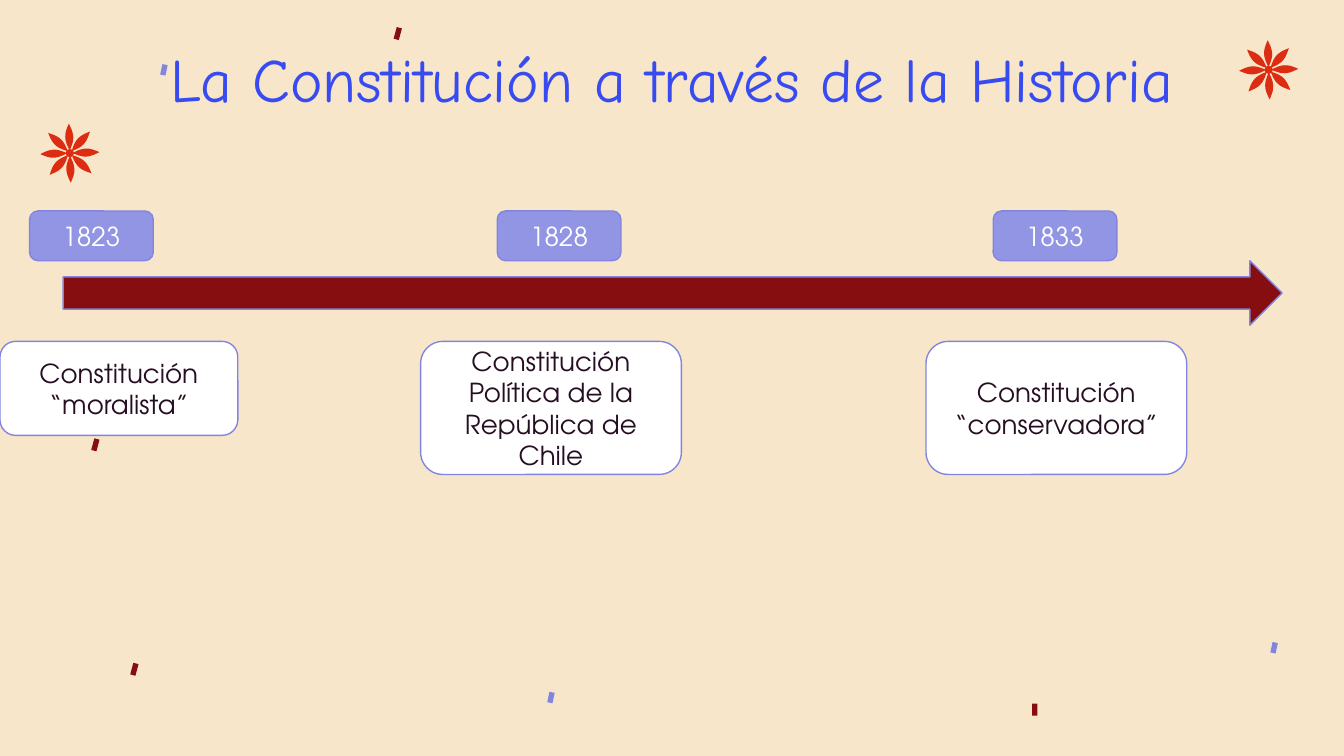
"""Build a timeline slide of the Chilean constitutions of 1823, 1828 and 1833."""
import math

import pptx
import pptx.dml.color
import pptx.enum.shapes
import pptx.enum.text
import pptx.util

Inches = pptx.util.Inches
Pt = pptx.util.Pt
RGBColor = pptx.dml.color.RGBColor
MSO_SHAPE = pptx.enum.shapes.MSO_SHAPE

CREAM = RGBColor(0xF8, 0xE6, 0xCA)
RED = RGBColor(0xDC, 0x2D, 0x12)
MAROON = RGBColor(0x86, 0x0D, 0x10)
LILAC = RGBColor(0x82, 0x85, 0xE0)
LIGHT_LILAC = RGBColor(0x92, 0x94, 0xE4)
BLUE = RGBColor(0x38, 0x4B, 0xF1)
PLUM = RGBColor(0x25, 0x0E, 0x22)
WHITE = RGBColor(0xFF, 0xFF, 0xFF)


def style_shape(sp, fill, line=None):
    sp.shadow.inherit = False
    sp.fill.solid()
    sp.fill.fore_color.rgb = fill
    if line is None:
        sp.line.fill.background()
    else:
        sp.line.color.rgb = line
        sp.line.width = Pt(0.75)


def write_text(sp, text, font, size, color):
    tf = sp.text_frame
    frame_format = {
        "word_wrap": True,
        "auto_size": pptx.enum.text.MSO_AUTO_SIZE.NONE,
        "vertical_anchor": pptx.enum.text.MSO_ANCHOR.MIDDLE,
        "margin_left": Inches(0.1),
        "margin_top": Inches(0.1),
        "margin_right": Inches(0.1),
        "margin_bottom": Inches(0.1),
    }
    for name, value in frame_format.items():
        setattr(tf, name, value)
    p = tf.paragraphs[0]
    p.alignment = pptx.enum.text.PP_ALIGN.CENTER
    r = p.add_run()
    r.text = text
    for name, value in {"name": font, "size": Pt(size), "bold": False}.items():
        setattr(r.font, name, value)
    r.font.color.rgb = color


prs = pptx.Presentation()
prs.slide_width = Inches(10)
prs.slide_height = prs.slide_width * 9 // 16
s = prs.slides.add_slide(prs.slide_layouts[5])
s.background.fill.solid()
s.background.fill.fore_color.rgb = CREAM

title = s.shapes.title
title_box = {"left": 1.03, "top": 0.21, "width": 7.94, "height": 0.77}
for name, value in title_box.items():
    setattr(title, name, Inches(value))
write_text(title, "La Constitución a través de la Historia", "Comic Neue", 33, BLUE)
title.text_frame.margin_bottom = Inches(0.13)

steps = 10
for cx, cy in [(0.52, 1.14), (9.44, 0.52)]:
    for petal in range(8):
        angle = math.radians(45 * petal - 2)
        points = []
        for i in range(2 * steps):
            along = 0.02 + 0.2 * (1 - abs(1 - i / steps))
            across = 0.03 * math.sin(math.pi * i / steps)
            x = cx + along * math.cos(angle) - across * math.sin(angle)
            y = cy + along * math.sin(angle) + across * math.cos(angle)
            points.append((Inches(x), Inches(y)))
        builder = s.shapes.build_freeform(*points[0])
        builder.add_line_segments(points[1:], close=True)
        style_shape(builder.convert_to_shape(), RED)
    sp = s.shapes.add_shape(
        MSO_SHAPE.OVAL, Inches(cx - 0.03), Inches(cy - 0.03), Inches(0.06), Inches(0.06)
    )
    style_shape(sp, RED)

confetti = [
    (7.7, 5.28, 0, MAROON),
    (1.0, 4.98, 15, MAROON),
    (0.71, 3.31, 15, MAROON),
    (2.96, 0.25, 15, MAROON),
    (1.22, 0.52, 12, LILAC),
    (4.1, 5.19, 12, LILAC),
    (9.48, 4.82, 12, LILAC),
]
for cx, cy, tilt, color in confetti:
    w, h = (0.04, 0.09) if color == MAROON else (0.04, 0.08)
    sp = s.shapes.add_shape(
        MSO_SHAPE.RECTANGLE, Inches(cx - w / 2), Inches(cy - h / 2), Inches(w), Inches(h)
    )
    sp.rotation = tilt
    style_shape(sp, color)

arrow = s.shapes.add_shape(
    MSO_SHAPE.RIGHT_ARROW, Inches(0.47), Inches(1.94), Inches(9.07), Inches(0.48)
)
style_shape(arrow, MAROON, LILAC)

events = [
    ("1823", 0.22, "Constitución “moralista”", 0, 1.77, 0.7),
    ("1828", 3.7, "Constitución Política de la República de Chile", 3.13, 1.94, 0.99),
    ("1833", 7.39, "Constitución “conservadora”", 6.89, 1.94, 0.99),
]
for year, year_left, text, left, width, height in events:
    boxes = [
        (year, (year_left, 1.57, 0.92, 0.37), LIGHT_LILAC, WHITE),
        (text, (left, 2.54, width, height), WHITE, PLUM),
    ]
    for label, box, fill, color in boxes:
        sp = s.shapes.add_shape(MSO_SHAPE.ROUNDED_RECTANGLE, *map(Inches, box))
        style_shape(sp, fill, LILAC)
        write_text(sp, label, "TeX Gyre Adventor", 14, color)

prs.save("out.pptx")
